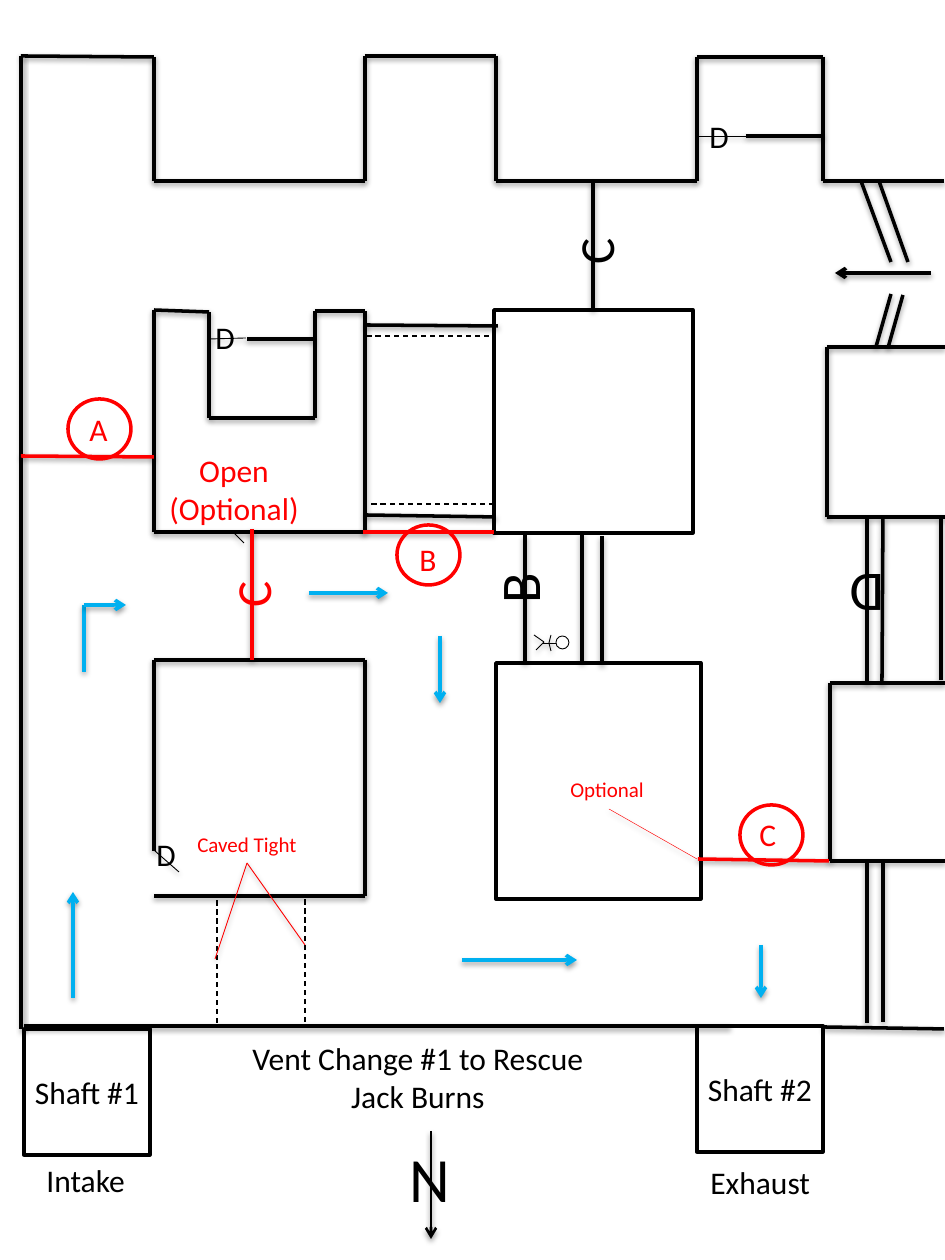
from lxml import etree
from pptx import Presentation
from pptx.dml.color import RGBColor
from pptx.enum.dml import MSO_LINE
from pptx.enum.shapes import MSO_CONNECTOR, MSO_SHAPE
from pptx.enum.text import MSO_ANCHOR, MSO_AUTO_SIZE, PP_ALIGN
from pptx.oxml.ns import qn
from pptx.util import Pt

STRAIGHT = MSO_CONNECTOR.STRAIGHT
RECT, OVAL, NODE = MSO_SHAPE.RECTANGLE, MSO_SHAPE.OVAL, MSO_SHAPE.FLOWCHART_CONNECTOR
DASH = MSO_LINE.DASH
LEFT, CENTER, MIDDLE = PP_ALIGN.LEFT, PP_ALIGN.CENTER, MSO_ANCHOR.MIDDLE
GROW = MSO_AUTO_SIZE.SHAPE_TO_FIT_TEXT
BLACK, WHITE = RGBColor(0, 0, 0), RGBColor(255, 255, 255)
RED, BLUE = RGBColor(255, 0, 0), RGBColor(0, 176, 240)
FONT = "Calibri"
PX = 914400 // 126
W, H = 945, 1260

# Boxes: left, top, width, height, label
BOXES = [
    (494, 310, 199, 223, ""),
    (496, 663, 205, 236, ""),
    (24, 1029, 126, 126, "Shaft #1"),
    (697, 1026, 126, 126, "Shaft #2"),
]

# Lines are chains of points
WALLS = [
    # mine outline
    [(21, 1029), (21, 56), (154, 57), (154, 181), (365, 181), (365, 56), (496, 56),
     (496, 181), (697, 181), (697, 57), (823, 57), (823, 181), (944, 181)],
    [(24, 1026), (729, 1026)],
    [(823, 1027), (944, 1029)],
    # pillars on the right
    [(945, 347), (827, 347), (827, 517), (945, 517)],
    [(945, 683), (830, 683), (830, 861), (945, 861)],
    # pillars on the left
    [(209, 312), (154, 310), (154, 532), (365, 532), (365, 311), (315, 311),
     (315, 418), (209, 418), (209, 312)],
    [(154, 851), (154, 660), (365, 660), (365, 896), (154, 896)],
    # stoppings
    [(593, 181), (593, 310)],
    [(525, 535), (525, 663)],
    [(582, 533), (582, 663)],
    [(602, 536), (602, 665)],
    [(365, 325), (498, 326)],
    [(365, 515), (496, 517)],
    [(867, 861), (867, 1023)],
    [(883, 861), (883, 1022)],
    [(867, 518), (867, 683)],
    [(883, 518), (882, 684)],
    [(941, 517), (941, 680)],
    [(746, 136), (823, 136)],
    [(247, 339), (314, 339)],
    # overcast
    [(861, 181), (891, 262)],
    [(879, 181), (908, 262)],
    [(876, 347), (891, 294)],
    [(888, 348), (903, 295)],
]
DOORS = [
    [(746, 136), (699, 136)],
    [(246, 338), (210, 339)],
    [(155, 851), (179, 872)],
    [(234, 533), (244, 543)],
]
MINER = [
    [(534, 635), (544, 642), (536, 650)],
    [(556, 643), (543, 643)],
    [(551, 635), (549, 643), (551, 651)],
]
CAVED = [
    [(489, 336), (363, 336)],
    [(494, 504), (368, 504)],
    [(217, 1023), (217, 896)],
    [(305, 1022), (305, 896)],
]
CHANGES = [
    [(252, 529), (252, 660)],
    [(363, 532), (494, 532)],
    [(21, 456), (154, 457)],
    [(698, 859), (829, 861)],
]
AIRFLOW = [
    [(73, 998), (73, 892)],
    [(84, 672), (84, 605), (126, 605)],
    [(309, 593), (388, 593)],
    [(440, 636), (440, 703)],
    [(462, 960), (577, 960)],
    [(761, 945), (761, 998)],
]

# Chains, colour, width, extra format
LINES = [
    (WALLS, BLACK, 2, {}),
    (DOORS + MINER, BLACK, 0.5, {}),
    (CAVED, BLACK, 0.75, {"dash": True, "shadow": False}),
    (CHANGES, RED, 2, {}),
    ([[(215, 959), (247, 863), (305, 945)]], RED, 0.5, {}),
    ([[(609, 809), (697, 859)]], RED, 0.25, {}),
    (AIRFLOW, BLUE, 2, {"arrow": True}),
    ([[(931, 273), (835, 273)]], BLACK, 2, {"arrow": True}),
    ([[(431, 1131), (431, 1239)]], BLACK, 1.5, {"arrow": True}),
]

# Labels: text, left, top, width, height, size, colour, alignment, rotation
LABELS = [
    ("Intake", 34, 1155, 105, 50, 18, BLACK, LEFT, 0),
    ("Exhaust", 698, 1157, 126, 50, 18, BLACK, LEFT, 0),
    ("Vent Change #1 to Rescue\nJack Burns", 234, 1033, 368, 89, 18, BLACK, CENTER, 0),
    ("Open\n(Optional)", 156, 445, 156, 89, 18, RED, CENTER, 0),
    ("Caved Tight", 184, 825, 126, 38, 12, RED, CENTER, 0),
    ("Optional", 558, 770, 100, 38, 12, RED, LEFT, 0),
    ("C", 564, 210, 62, 72, 28, BLACK, LEFT, 270),
    ("C", 226, 558, 52, 72, 28, RED, LEFT, 270),
    ("B", 490, 547, 57, 81, 32, BLACK, LEFT, 270),
    ("D", 837, 556, 60, 81, 32, BLACK, LEFT, 180),
    ("D", 697, 111, 45, 50, 18, BLACK, LEFT, 0),
    ("D", 203, 312, 45, 50, 18, BLACK, LEFT, 0),
    ("D", 144, 829, 45, 50, 18, BLACK, LEFT, 0),
    ("N", 397, 1133, 67, 89, 36, BLACK, LEFT, 0),
    ("A", 77, 404, 44, 50, 18, RED, LEFT, 0),
    ("B", 407, 534, 43, 50, 18, RED, LEFT, 0),
    ("C", 747, 809, 43, 50, 18, RED, LEFT, 0),
]
MARKER_SPOTS = [(68, 399), (397, 525), (740, 805)]
MARKER_SIZE = (63, 60)


def write(shape, text, size, color, align):
    tf = shape.text_frame
    tf.word_wrap = False
    for i, line in enumerate(text.split("\n")):
        p = tf.paragraphs[0] if i == 0 else tf.add_paragraph()
        p.alignment = align
        r = p.add_run()
        r.text = line
        for key, value in {"name": FONT, "size": Pt(size)}.items():
            setattr(r.font, key, value)
        r.font.color.rgb = color


def add_shape(s, kind, box, color, width, fill=None):
    sp = s.shapes.add_shape(kind, *(v * PX for v in box))
    sp.shadow.inherit = False
    if fill is None:
        sp.fill.background()
    else:
        sp.fill.solid()
        sp.fill.fore_color.rgb = fill
    sp.line.color.rgb = color
    sp.line.width = Pt(width)
    return sp


def add_line(s, start, end, color, width, dash=False, arrow=False, shadow=True):
    c = s.shapes.add_connector(STRAIGHT, *(v * PX for v in start + end))
    c.line.color.rgb = color
    c.line.width = Pt(width)
    if dash:
        c.line.dash_style = DASH
    if arrow:
        etree.SubElement(c.line._get_or_add_ln(), qn("a:tailEnd"), type="arrow")
    effects = etree.SubElement(c._element.spPr, qn("a:effectLst"))
    if shadow:
        outer = etree.SubElement(effects, qn("a:outerShdw"), blurRad=str(Pt(3.1)),
                                 dist=str(Pt(1.6)), dir="5400000", rotWithShape="0")
        tint = etree.SubElement(outer, qn("a:srgbClr"), val=str(BLACK))
        etree.SubElement(tint, qn("a:alpha"), val="38000")


def main():
    prs = Presentation()
    prs.slide_width, prs.slide_height = W * PX, H * PX
    s = prs.slides.add_slide(prs.slide_layouts[6])

    # Boxes
    for *box, label in BOXES:
        sp = add_shape(s, RECT, box, BLACK, 2, WHITE)
        if label:
            sp.text_frame.vertical_anchor = MIDDLE
            write(sp, label, 18, BLACK, CENTER)

    # Walls, changes and arrows
    for chains, color, width, extra in LINES:
        for chain in chains:
            for i, (start, end) in enumerate(zip(chain, chain[1:]), 2):
                fmt = dict(extra, arrow="arrow" in extra and i == len(chain))
                add_line(s, start, end, color, width, **fmt)

    # Miner's head
    add_shape(s, NODE, (556, 636, 13, 13), BLACK, 0.5)

    # Labels
    for text, x, y, w, h, size, color, align, rotation in LABELS:
        sp = s.shapes.add_textbox(x * PX, y * PX, w * PX, h * PX)
        sp.rotation = rotation
        write(sp, text, size, color, align)
        sp.text_frame.auto_size = GROW

    # Circled markers
    for spot in MARKER_SPOTS:
        add_shape(s, OVAL, spot + MARKER_SIZE, RED, 2)

    prs.save("out.pptx")


if __name__ == "__main__":
    main()
